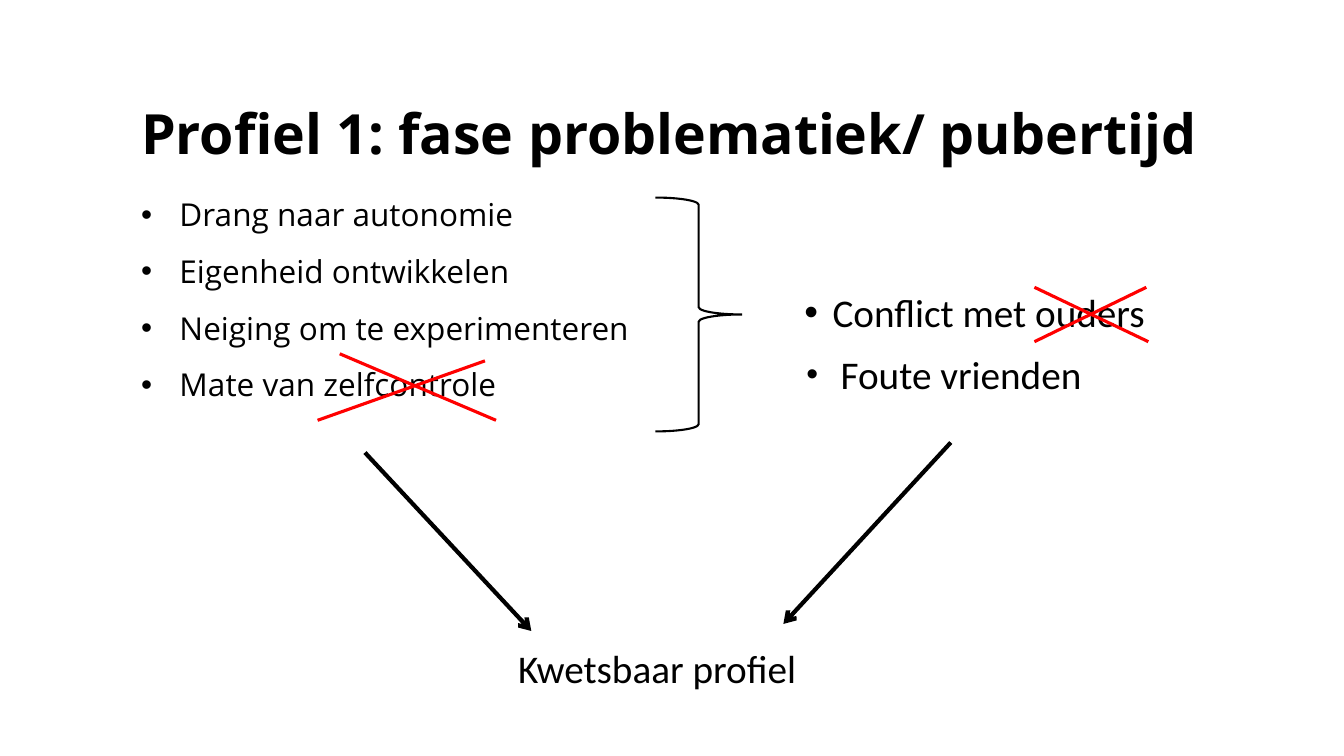
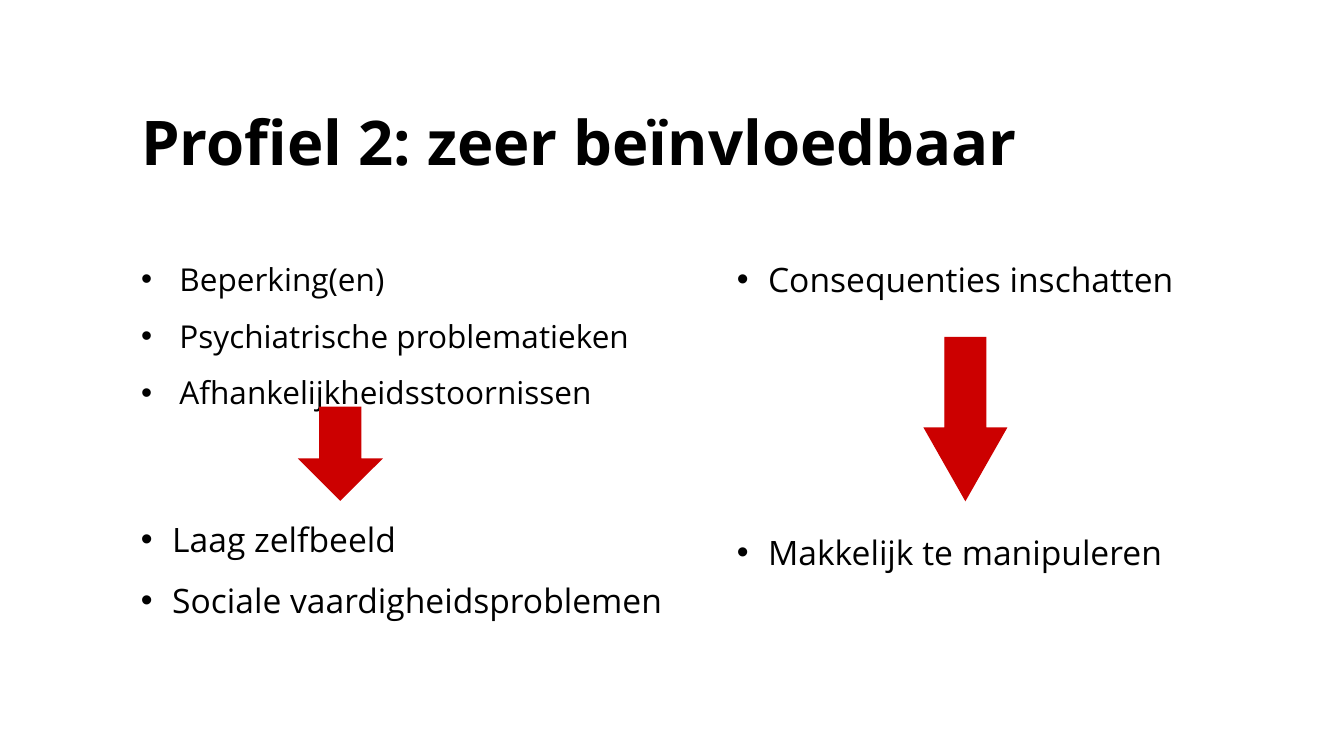
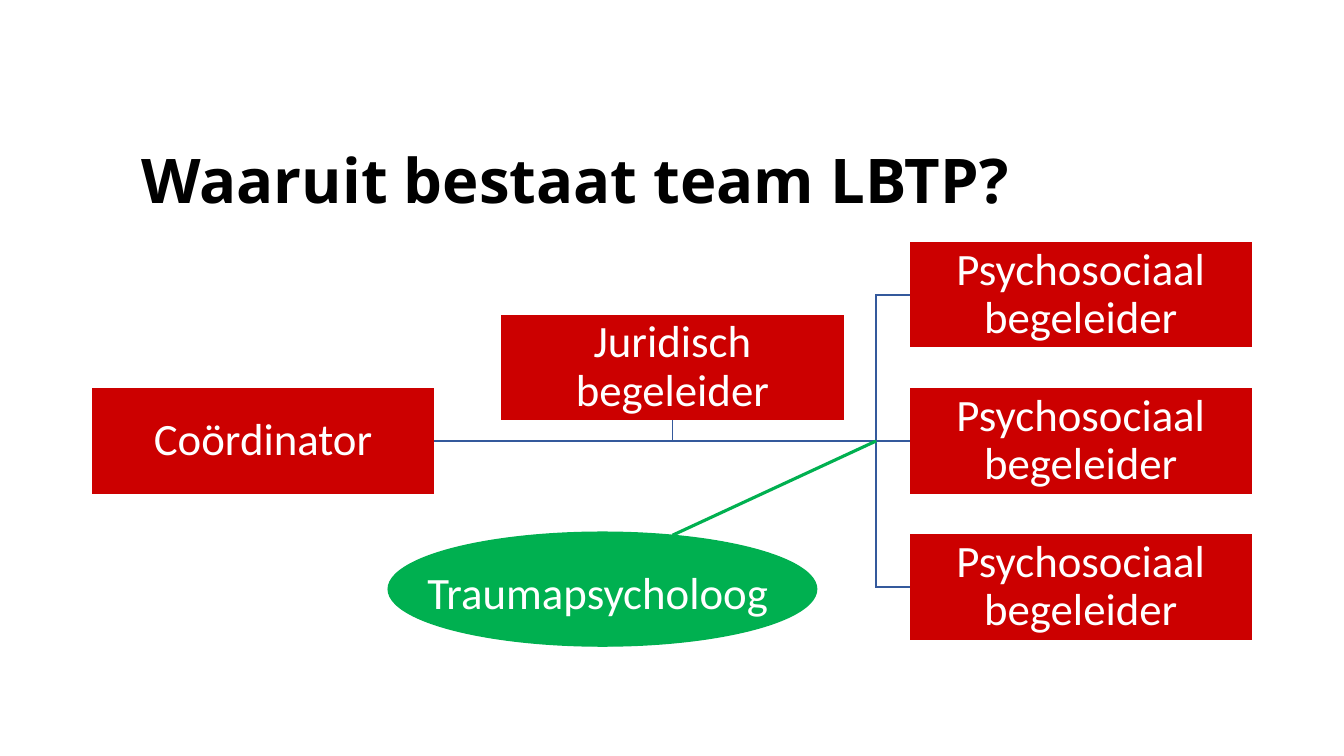
import pptx
import pptx.util
import pptx.dml.color
import pptx.enum.shapes
import pptx.enum.text
import pptx.oxml.ns
import lxml.etree

Inches = pptx.util.Inches
Shape = pptx.enum.shapes.MSO_SHAPE
Anchor = pptx.enum.text.MSO_ANCHOR
Align = pptx.enum.text.PP_ALIGN

BLACK, WHITE = "000000", "FFFFFF"
RED, BRIGHT, GREEN, BLUE = "CC0000", "FF0000", "00B050", "34599C"
HEAD, BODY = "Open Sans", "Calibri"


def color(code):
    """Turn a hex string into a colour."""
    return pptx.dml.color.RGBColor.from_string(code)


def child(node, tag, **attrs):
    """Append a drawing element to a node."""
    return lxml.etree.SubElement(node, pptx.oxml.ns.qn("a:" + tag), **attrs)


def place(shape, box):
    """Move and size a shape to a box in inches."""
    shape.left, shape.top, shape.width, shape.height = map(Inches, box)


def write(shape, text, size=24, font=BODY, tint=BLACK, bold=False, space=1.0,
          hang=0, dot=100, align=Align.LEFT, anchor=Anchor.TOP, inset=None):
    """Fill a shape with text, one paragraph a line."""
    frame = shape.text_frame
    frame.word_wrap = True
    frame.auto_size = pptx.enum.text.MSO_AUTO_SIZE.NONE
    frame.vertical_anchor = anchor
    if inset is not None:
        frame.margin_left = frame.margin_right = Inches(inset)
        frame.margin_top = frame.margin_bottom = Inches(inset)
    for num, line in enumerate(text.split("\n")):
        para = frame.add_paragraph() if num else frame.paragraphs[0]
        if hang:
            props = para._p.get_or_add_pPr()
            props.set("marL", str(Inches(hang)))
            props.set("indent", str(-Inches(hang)))
            child(props, "buSzPct", val=str(dot * 1000))
            child(props, "buFont", typeface="Arial")
            child(props, "buChar", char="•")
        para.alignment = align
        para.line_spacing = space
        para.space_before = pptx.util.Pt(0)
        run = para.add_run()
        run.text = line
        run.font.size = pptx.util.Pt(size)
        run.font.name = font
        run.font.bold = bold
        run.font.color.rgb = color(tint)


def label(slide, box, text, **form):
    """Add a text box."""
    write(slide.shapes.add_textbox(*map(Inches, box)), text, **form)


def title(slide, text, box, size=44):
    """Set the slide title."""
    place(slide.shapes.title, box)
    write(slide.shapes.title, text, size=size, font=HEAD, bold=True,
          space=0.9, anchor=Anchor.BOTTOM)


def points(slide, text, box):
    """Set the bullet list in the body placeholder."""
    body = slide.placeholders[1]
    place(body, box)
    write(body, text, size=22.5, font=HEAD, space=1.5, hang=0.38)


def stroke(shape, tint, width=1):
    """Give a shape a line with sharp corners."""
    shape.line.color.rgb = color(tint)
    shape.line.width = pptx.util.Pt(width)
    child(shape.line._get_or_add_ln(), "miter", lim="800000")


def solid(slide, kind, box, fill):
    """Add a filled preset shape."""
    shape = slide.shapes.add_shape(kind, *map(Inches, box))
    shape.shadow.inherit = False
    shape.fill.solid()
    shape.fill.fore_color.rgb = color(fill)
    stroke(shape, fill)
    return shape


def link(slide, start, end, tint=BLUE, width=1, arrow=False):
    """Draw a straight line between two points."""
    line = slide.shapes.add_connector(
        pptx.enum.shapes.MSO_CONNECTOR.STRAIGHT, *map(Inches, start + end))
    stroke(line, tint, width)
    if arrow:
        child(line.line._get_or_add_ln(), "tailEnd", type="arrow")
    child(line._element.spPr, "effectLst")
    return line


def bend(slide, start, *rest):
    """Draw an open line with corners."""
    pen = slide.shapes.build_freeform(*map(Inches, start))
    pen.add_line_segments([tuple(map(Inches, spot)) for spot in rest],
                          close=False)
    shape = pen.convert_to_shape()
    shape.shadow.inherit = False
    shape.fill.background()
    stroke(shape, BLUE)


def cross(slide, box, cut=0, trim=0, drop=0):
    """Strike out a box with two red lines."""
    left, top, wide, high = box
    right, base = left + wide, top + high
    link(slide, (left + cut, top), (right, base), BRIGHT, 2.25)
    link(slide, (left, base), (right - trim, top + drop), BRIGHT, 2.25)


def brace(slide, box):
    """Draw an open right brace."""
    shape = solid(slide, Shape.RIGHT_BRACE, box, BLACK)
    shape.fill.background()
    shape.line.width = pptx.util.Pt(1.5)


def phase(slide):
    """Build the slide on the first profile."""
    title(slide, "Profiel 1: fase problematiek/ pubertijd",
          (1.3, 0.55, 11.3, 1.15), 39.6)
    points(slide, "Drang naar autonomie\nEigenheid ontwikkelen\n"
           "Neiging om te experimenteren\nMate van zelfcontrole",
           (1.3, 1.7, 10.73, 4.27))
    brace(slide, (6.5, 1.96, 0.86, 2.32))
    label(slide, (7.88, 2.81, 4.21, 0.57), "Conflict met ouders",
          size=28, hang=0.28)
    label(slide, (7.9, 3.43, 4.57, 0.57), "Foute vrienden",
          size=28, hang=0.34, dot=86)
    cross(slide, (3.15, 3.51, 1.77, 0.66), cut=0.22, trim=0.11, drop=0.07)
    cross(slide, (10.26, 2.85, 1.13, 0.54), trim=0.02)
    link(slide, (3.62, 4.49), (5.27, 6.26), BLACK, 3, arrow=True)
    link(slide, (9.43, 4.39), (7.77, 6.19), BLACK, 3, arrow=True)
    label(slide, (5.04, 6.34, 3.81, 0.57), "Kwetsbaar profiel", size=28)


def sway(slide):
    """Build the slide on the second profile."""
    title(slide, "Profiel 2: zeer beïnvloedbaar", (1.3, 0.67, 10.73, 1.15))
    points(slide, "Beperking(en)\nPsychiatrische problematieken\n"
           "Afhankelijkheidsstoornissen", (1.3, 2.34, 10.73, 4.27))
    notes = [
        ((1.3, 4.9, 5.54, 1.85), 1.5,
         "Laag zelfbeeld\nSociale vaardigheidsproblemen"),
        ((7.21, 2.52, 5.54, 0.98), 1.0, "Consequenties inschatten"),
        ((7.21, 5.23, 5.54, 0.98), 1.0, "Makkelijk te manipuleren"),
    ]
    for box, space, text in notes:
        label(slide, box, text, font=HEAD, space=space, hang=0.31)
    for left, top, head in ((2.97, 4.04, 0.5), (9.17, 3.35, 0.88)):
        arrow = solid(slide, Shape.DOWN_ARROW,
                      (left, top, 0.81, 4.96 - top), RED)
        arrow.adjustments[1] = head


def chart(slide, box):
    """Draw the team tree inside a box."""
    left, top, wide, high = box
    cell, tall = 3.38, 1.03
    step = (high - tall) / 2
    near, far = left + cell, left + wide - cell
    axis = top + high / 2
    spine = left + 7.77
    stem = left + 4.06 + cell / 2

    def role(x, y, text):
        """Add one team member."""
        shape = solid(slide, Shape.RECTANGLE, (x, y, cell, tall), RED)
        write(shape, text, size=32, tint=WHITE, space=0.9,
              align=Align.CENTER, anchor=Anchor.MIDDLE, inset=0.02)
        return shape

    bend(slide, (near, axis), (stem, axis), (stem, top + 0.72 + tall))
    for level in (axis + step, axis - step):
        bend(slide, (near, axis), (spine, axis), (spine, level), (far, level))
    trunk = link(slide, (near, axis), (far, axis))

    lead = role(left, top + step, "Coördinator")
    guides = [role(far, top + row * step, "Psychosociaal begeleider")
              for row in range(3)]
    role(left + 4.06, top + 0.72, "Juridisch begeleider")
    trunk.begin_connect(lead, 3)
    trunk.end_connect(guides[1], 1)

    link(slide, (stem, top + 2.9), (spine, axis), GREEN, 2.25)
    solid(slide, Shape.OVAL, (left + 2.93, top + 2.87, 4.25, 1.13), GREEN)
    label(slide, (left + 3.22, top + 3.14, 4.05, 0.64), "Traumapsycholoog",
          size=32, tint=WHITE)


def team(slide):
    """Build the slide on the team."""
    title(slide, "Waaruit bestaat team LBTP?", (1.3, 1.05, 10.73, 1.15))
    chart(slide, (0.92, 2.41, 11.49, 3.93))


def main():
    """Build and save the deck."""
    deck = pptx.Presentation()
    deck.slide_width, deck.slide_height = Inches(13.33), Inches(7.5)
    for build, layout in ((phase, 1), (sway, 1), (team, 5)):
        build(deck.slides.add_slide(deck.slide_layouts[layout]))
    deck.save("out.pptx")


if __name__ == "__main__":
    main()
